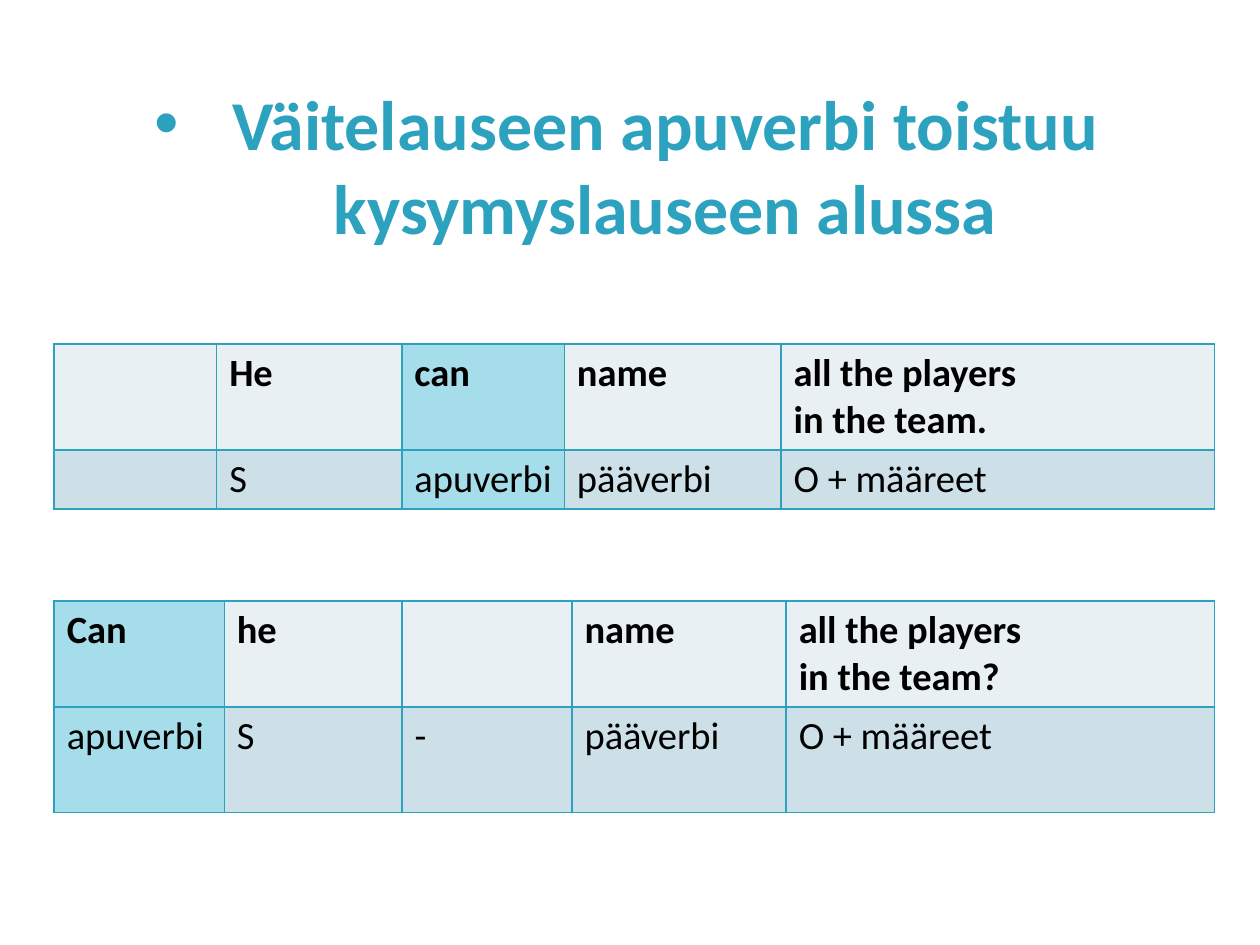
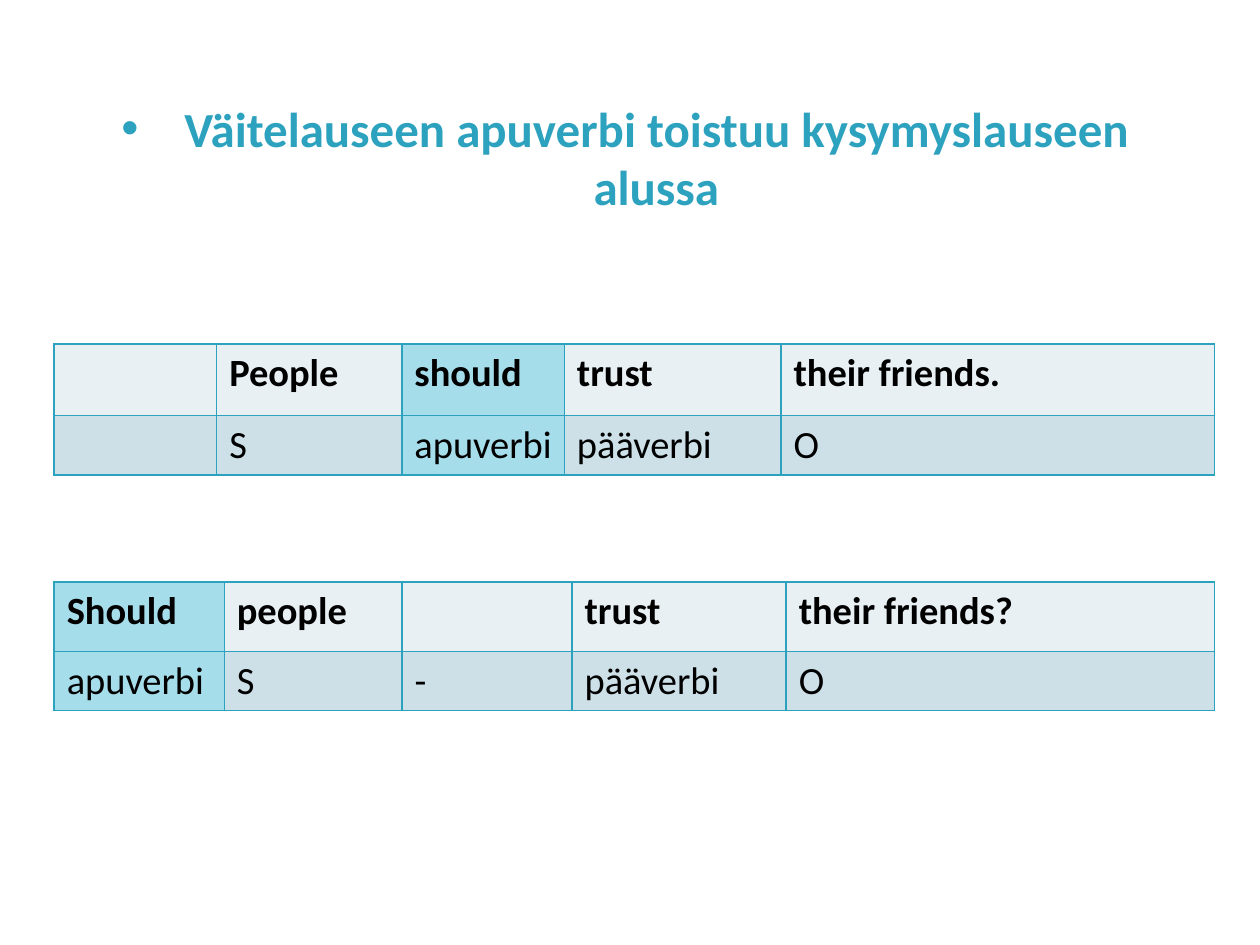
from dataclasses import dataclass

import lxml.etree
import pptx
import pptx.dml.color
import pptx.enum.text
import pptx.oxml.ns
import pptx.presentation
import pptx.slide
import pptx.table
import pptx.text.text
import pptx.util

Inches = pptx.util.Inches
Color = pptx.dml.color.RGBColor
Align = pptx.enum.text.PP_ALIGN


@dataclass(frozen=True)
class Theme:
    font: str = "Calibri"
    accent: Color = Color.from_string("2DA2BF")
    text: Color = Color.from_string("000000")
    words_fill: Color = Color.from_string("E8F0F4")
    roles_fill: Color = Color.from_string("CDE0E8")
    auxiliary_fill: Color = Color.from_string("A6DDEA")
    cell_size: int = 22
    border_width: int = 1


@dataclass(frozen=True)
class Title:
    left: float
    top: float
    width: float
    size: int
    indent: float


@dataclass(frozen=True)
class SentencePattern:
    """Column widths and roles shared by all sentences of one kind."""
    columns: tuple[float, ...]
    auxiliary_column: int
    roles: tuple[str, ...]


@dataclass(frozen=True)
class Sentence:
    pattern: SentencePattern
    top: float
    row_heights: tuple[float, float]
    words: tuple[str, ...]
    object_role: str


@dataclass(frozen=True)
class Lesson:
    title: Title
    sentences: tuple[Sentence, ...]


THEME = Theme()
TITLE_TEXT = "Väitelauseen apuverbi toistuu kysymyslauseen alussa"
TITLE_HEIGHT = 1.25
TABLE_LEFT = 0.43

STATEMENT = SentencePattern((1.29, 1.47, 1.29, 1.72, 3.44), 2,
                            ("", "S", "apuverbi", "pääverbi"))
QUESTION = SentencePattern((1.35, 1.41, 1.35, 1.7, 3.4), 0,
                           ("apuverbi", "S", "-", "pääverbi"))

LESSONS = (
    Lesson(Title(0.29, 0.68, 9.36, 40, 0.62), (
        Sentence(STATEMENT, 2.73, (0.84, 0.47),
                 ("", "He", "can", "name", "all the players\nin the team."), "O + määreet"),
        Sentence(QUESTION, 4.77, (0.84, 0.84),
                 ("Can", "he", "", "name", "all the players\nin the team?"), "O + määreet"),
    )),
    Lesson(Title(0.46, 0.62, 9, 28, 0.5), (
        Sentence(STATEMENT, 2.73, (0.57, 0.47),
                 ("", "People", "should", "trust", "their friends."), "O"),
        Sentence(QUESTION, 4.62, (0.55, 0.47),
                 ("Should", "people", "", "trust", "their friends?"), "O"),
    )),
)


def write_text(text_frame: pptx.text.text.TextFrame, text: str, *, size: int,
               color: Color = THEME.text, bold: bool = False,
               align: Align = Align.LEFT, bullet_indent: float = 0) -> None:
    """Write one paragraph per line of text."""
    for index, line in enumerate(text.split("\n")):
        paragraph = text_frame.add_paragraph() if index else text_frame.paragraphs[0]
        paragraph.alignment = align
        if bullet_indent:
            add_bullet(paragraph, bullet_indent)
        if line:
            run = paragraph.add_run()
            run.text = line
            run.font.name = THEME.font
            run.font.size = pptx.util.Pt(size)
            run.font.bold = bold
            run.font.color.rgb = color


def add_bullet(paragraph: pptx.text.text._Paragraph, indent: float) -> None:
    properties = paragraph._p.get_or_add_pPr()
    properties.set("marL", str(Inches(indent)))
    properties.set("indent", str(-Inches(indent)))
    qn = pptx.oxml.ns.qn
    lxml.etree.SubElement(properties, qn("a:buFont"), typeface="Arial")
    lxml.etree.SubElement(properties, qn("a:buChar"), char="•")


def add_borders(cell: pptx.table._Cell) -> None:
    """Put a line on all four sides; call before the fill is set."""
    properties = cell._tc.get_or_add_tcPr()
    qn = pptx.oxml.ns.qn
    for side in ("a:lnL", "a:lnR", "a:lnT", "a:lnB"):
        line = lxml.etree.SubElement(properties, qn(side),
                                     w=str(pptx.util.Pt(THEME.border_width)))
        fill = lxml.etree.SubElement(line, qn("a:solidFill"))
        lxml.etree.SubElement(fill, qn("a:srgbClr"), val=str(THEME.accent))


def add_title(slide: pptx.slide.Slide, title: Title) -> None:
    shape = slide.shapes.add_textbox(Inches(title.left), Inches(title.top),
                                     Inches(title.width), Inches(TITLE_HEIGHT))
    shape.text_frame.word_wrap = True
    shape.text_frame.vertical_anchor = pptx.enum.text.MSO_ANCHOR.MIDDLE
    write_text(shape.text_frame, TITLE_TEXT, size=title.size, color=THEME.accent,
               bold=True, align=Align.CENTER, bullet_indent=title.indent)


def add_sentence(slide: pptx.slide.Slide, sentence: Sentence) -> None:
    """Draw the words of a sentence above their grammatical roles."""
    pattern = sentence.pattern
    rows = (sentence.words, pattern.roles + (sentence.object_role,))
    table = slide.shapes.add_table(
        len(rows), len(pattern.columns), Inches(TABLE_LEFT), Inches(sentence.top),
        Inches(sum(pattern.columns)), Inches(sum(sentence.row_heights))).table
    table.first_row = table.horz_banding = False
    for column, width in zip(table.columns, pattern.columns):
        column.width = Inches(width)
    for row, height in zip(table.rows, sentence.row_heights):
        row.height = Inches(height)
    row_fills = (THEME.words_fill, THEME.roles_fill)
    for row_index, texts in enumerate(rows):
        for column_index, text in enumerate(texts):
            cell = table.cell(row_index, column_index)
            add_borders(cell)
            cell.fill.solid()
            is_auxiliary = column_index == pattern.auxiliary_column
            cell.fill.fore_color.rgb = (THEME.auxiliary_fill if is_auxiliary
                                        else row_fills[row_index])
            write_text(cell.text_frame, text, size=THEME.cell_size, bold=row_index == 0)


def add_lesson(presentation: pptx.presentation.Presentation, lesson: Lesson) -> None:
    slide = presentation.slides.add_slide(presentation.slide_layouts[6])
    add_title(slide, lesson.title)
    for sentence in lesson.sentences:
        add_sentence(slide, sentence)


def main() -> None:
    presentation = pptx.Presentation()
    presentation.slide_width = Inches(10)
    presentation.slide_height = Inches(7.5)
    for lesson in LESSONS:
        add_lesson(presentation, lesson)
    presentation.save("out.pptx")


if __name__ == "__main__":
    main()
